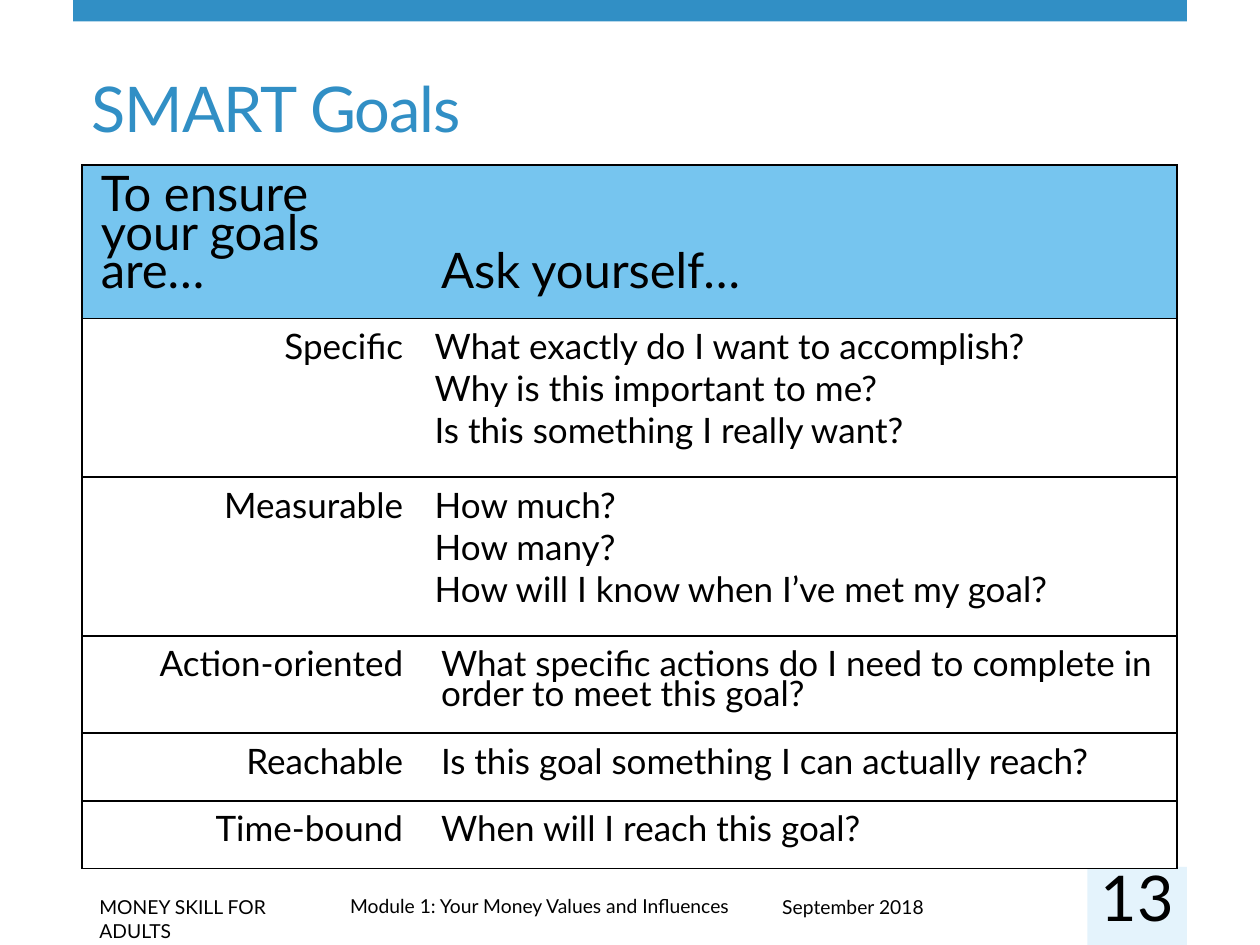
import pptx
import pptx.util
import pptx.dml.color
import pptx.enum.shapes
import pptx.enum.text
import pptx.oxml
import pptx.oxml.ns
from dataclasses import dataclass

Inches = pptx.util.Inches
Pt = pptx.util.Pt
Align = pptx.enum.text.PP_ALIGN
Anchor = pptx.enum.text.MSO_ANCHOR
BLACK, BLUE, SKY, PALE, WHITE = "000000", "318FC5", "76C5EF", "E4F3FC", "FFFFFF"
PAD = 0.15


@dataclass
class Label:
    text: str
    box: tuple[float, float, float, float]
    size: int = 11
    color: str = BLACK
    anchor: Anchor = Anchor.TOP
    align: Align = Align.LEFT
    pad: tuple[float, float] = (0.1, 0.05)
    track: int = 0


@dataclass
class Goal:
    name: str
    asks: list[str]
    height: float


LABELS = [
    Label("September 2018", (6.11, 7.06, 2.52, 0.29)),
    Label("MONEY SKILL FOR ADULTS", (0.69, 7.06, 2.09, 0.29)),
    Label("Module 1: Your Money Values and Influences", (2.68, 7.05, 5.66, 0.29)),
    Label("SMART Goals", (0.63, 0.36, 8.2, 0.84), 36, BLUE, Anchor.BOTTOM, track=-60),
    Label("13", (8.63, 6.96, 0.79, 0.31), 36, BLACK, Anchor.MIDDLE, Align.CENTER, (0, 0)),
]
GOALS = [
    Goal("Specific", ["What exactly do I want to accomplish?",
                      "Why is this important to me?",
                      "Is this something I really want?"], 1.26),
    Goal("Measurable", ["How much?", "How many?",
                        "How will I know when I’ve met my goal?"], 1.26),
    Goal("Action-oriented", ["What specific actions do I need to complete in "
                             "order to meet this goal?"], 0.75),
    Goal("Reachable", ["Is this goal something I can actually reach?"], 0.52),
    Goal("Time-bound", ["When will I reach this goal?"], 0.52),
]


def tint(code: str) -> pptx.dml.color.RGBColor:
    """Turn a hex string into a colour."""
    return pptx.dml.color.RGBColor.from_string(code)


def assign(item, values: dict) -> None:
    """Set each named attribute on an item."""
    for name, value in values.items():
        setattr(item, name, value)


def write(frame, lines: list[str], size: int, color: str = BLACK,
          align: Align = Align.LEFT, lead: int = 0, track: int = 0) -> None:
    """Fill a text frame with one paragraph per line."""
    for i, line in enumerate(lines):
        para = frame.add_paragraph() if i else frame.paragraphs[0]
        assign(para, {"alignment": align, "line_spacing": Pt(lead) if lead else None})
        run = para.add_run()
        run.text = line
        assign(run.font, {"name": "Lato", "size": Pt(size), "bold": False})
        run.font.color.rgb = tint(color)
        if track:
            run.font._element.set("spc", str(track))


def block(slide, box: tuple[float, float, float, float], color: str) -> None:
    """Draw a plain filled rectangle."""
    kind = pptx.enum.shapes.MSO_SHAPE.RECTANGLE
    shape = slide.shapes.add_shape(kind, *map(Inches, box))
    shape.shadow.inherit = False
    shape.fill.solid()
    shape.fill.fore_color.rgb = tint(color)
    shape.line.fill.background()


def label(slide, item: Label) -> None:
    """Draw one text box."""
    frame = slide.shapes.add_textbox(*map(Inches, item.box)).text_frame
    side, edge = map(Inches, item.pad)
    assign(frame, {"word_wrap": True, "vertical_anchor": item.anchor,
                   "margin_left": side, "margin_right": side,
                   "margin_top": edge, "margin_bottom": edge})
    write(frame, [item.text], item.size, item.color, item.align, track=item.track)


def border(cell, inner: str) -> None:
    """Line every side of a cell except the inner one."""
    props = cell._tc.get_or_add_tcPr()
    for side in "LRTB":
        fill = ("<a:noFill/>" if side == inner else
                f'<a:solidFill><a:srgbClr val="{BLACK}"/></a:solidFill>')
        props.append(pptx.oxml.parse_xml(
            f'<a:ln{side} {pptx.oxml.ns.nsdecls("a")} w="{Pt(1)}">{fill}</a:ln{side}>'))


def fill(cell, lines: list[str], inner: str, color: str, size: int, lead: int,
         align: Align = Align.LEFT, anchor: Anchor = Anchor.TOP) -> None:
    """Style and fill one table cell."""
    side, edge = (PAD, PAD) if lead else (0.1, 0.05)
    assign(cell, {"vertical_anchor": anchor,
                  "margin_left": Inches(side), "margin_right": Inches(side),
                  "margin_top": Inches(edge), "margin_bottom": Inches(edge)})
    border(cell, inner)
    cell.fill.solid()
    cell.fill.fore_color.rgb = tint(color)
    write(cell.text_frame, lines, size, align=align, lead=lead)


def grid(slide) -> None:
    """Draw the table of goals and questions."""
    highs = [0.68] + [goal.height for goal in GOALS]
    box = map(Inches, (0.65, 1.31, 8.69, sum(highs)))
    table = slide.shapes.add_table(len(highs), 2, *box).table
    assign(table, {"first_row": False, "horz_banding": False})
    for col, wide in zip(table.columns, (2.7, 5.99)):
        col.width = Inches(wide)
    for row, high in zip(table.rows, highs):
        row.height = Inches(high)
    fill(table.cell(0, 0), ["To ensure your goals are…"], "R", SKY, 28, 22,
         anchor=Anchor.BOTTOM)
    fill(table.cell(0, 1), ["Ask yourself…"], "L", SKY, 28, 17, anchor=Anchor.BOTTOM)
    for i, goal in enumerate(GOALS, 1):
        fill(table.cell(i, 0), [goal.name], "R", WHITE, 20, 17, Align.RIGHT)
        lead = 17 if len(goal.asks) == 1 else 0
        fill(table.cell(i, 1), goal.asks, "L", WHITE, 20, lead)


def main() -> None:
    """Build and save the slide."""
    deck = pptx.Presentation()
    assign(deck, {"slide_width": Inches(10), "slide_height": Inches(7.5)})
    slide = deck.slides.add_slide(deck.slide_layouts[6])
    block(slide, (8.63, 6.88, 0.79, 0.62), PALE)
    block(slide, (0.58, 0, 8.84, 0.17), BLUE)
    grid(slide)
    for item in LABELS:
        label(slide, item)
    deck.save("out.pptx")


if __name__ == "__main__":
    main()
